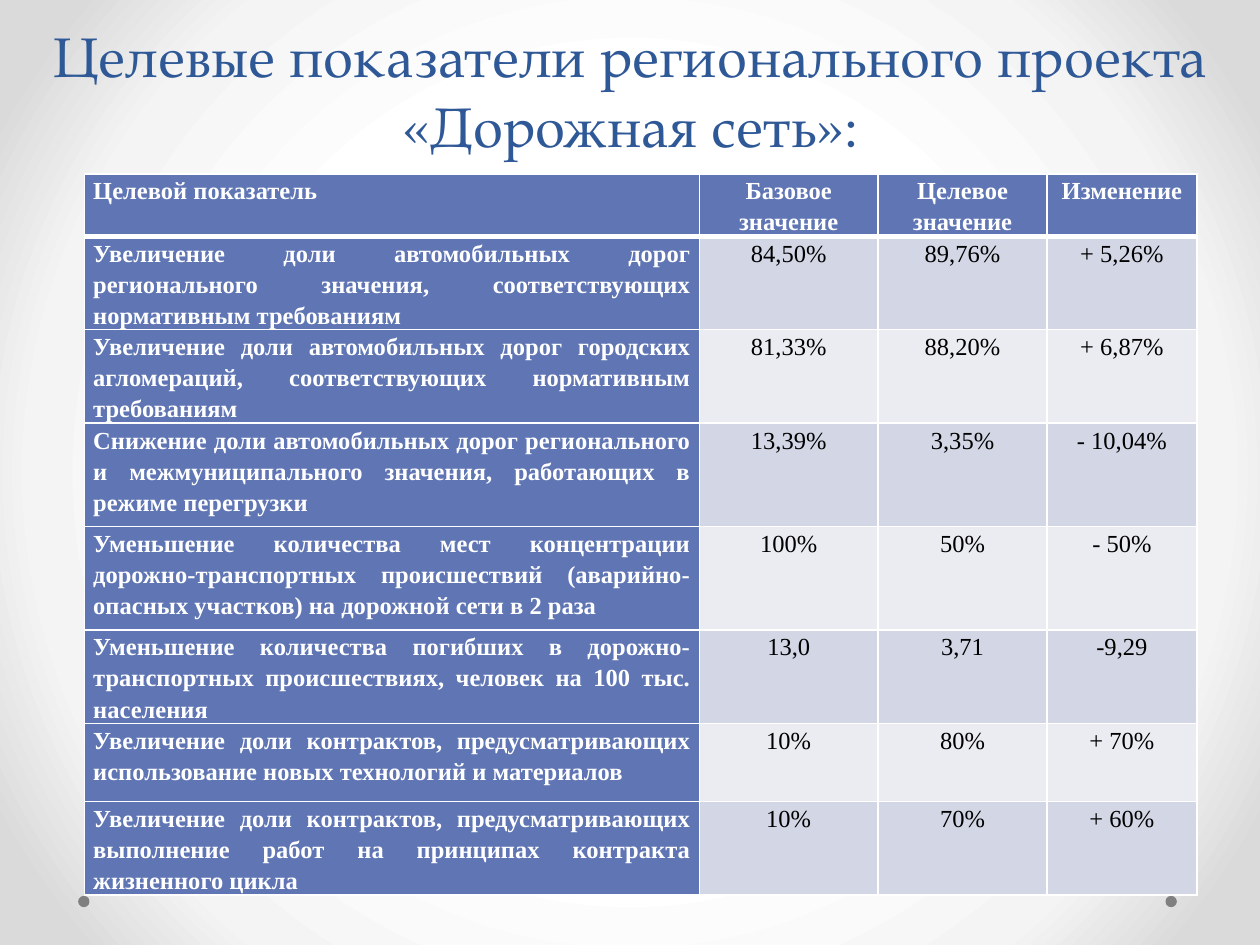
from dataclasses import dataclass

from lxml.etree import SubElement
from pptx import Presentation
from pptx.dml.color import RGBColor
from pptx.enum.shapes import MSO_SHAPE
from pptx.enum.text import MSO_ANCHOR, PP_ALIGN
from pptx.oxml import parse_xml
from pptx.oxml.ns import nsdecls, qn
from pptx.util import Inches, Pt


@dataclass(frozen=True)
class Theme:
    title_font: str = "TeX Gyre Pagella"
    table_font: str = "Times New Roman"
    title_size: int = 32
    title_leading: int = 40
    table_size: int = 14
    table_leading: float = 17.8
    title: str = "2F5897"
    accent: str = "6076B4"
    bands: tuple = ("D2D6E5", "EAECF2")
    white: str = "FFFFFF"
    black: str = "000000"
    dot: str = "808080"
    glow: tuple = ((50, "FFFFFF"), (76, "F4F4F4"), (92, "DADADA"))


THEME = Theme()
TITLE = "Целевые показатели регионального проекта «Дорожная сеть»:"
COLUMN_WIDTHS = (4.88, 1.42, 1.34, 1.19)
ROW_HEIGHTS = (0.21, 0.62, 0.62, 0.82, 0.82, 0.62, 0.62, 0.62)
INDICATORS = (
    ("Целевой показатель", "Базовое значение", "Целевое значение", "Изменение"),
    ("Увеличение доли автомобильных дорог регионального значения, "
     "соответствующих нормативным требованиям", "84,50%", "89,76%", "+ 5,26%"),
    ("Увеличение доли автомобильных дорог городских агломераций, "
     "соответствующих нормативным требованиям", "81,33%", "88,20%", "+ 6,87%"),
    ("Снижение доли автомобильных дорог регионального и межмуниципального "
     "значения, работающих в режиме перегрузки", "13,39%", "3,35%", "- 10,04%"),
    ("Уменьшение количества мест концентрации дорожно-транспортных происшествий "
     "(аварийно-опасных участков) на дорожной сети в 2 раза", "100%", "50%", "- 50%"),
    ("Уменьшение количества погибших в дорожно-транспортных происшествиях, "
     "человек на 100 тыс. населения", "13,0", "3,71", "-9,29"),
    ("Увеличение доли контрактов, предусматривающих использование новых "
     "технологий и материалов", "10%", "80%", "+ 70%"),
    ("Увеличение доли контрактов, предусматривающих выполнение работ на "
     "принципах контракта жизненного цикла", "10%", "70%", "+ 60%"),
)


def set_background(slide):
    """Fill the slide with a gradient that spreads from its centre."""
    stops = "".join(
        f'<a:gs pos="{position * 1000}"><a:srgbClr val="{color}"/></a:gs>'
        for position, color in THEME.glow
    )
    background = parse_xml(
        f'<p:bg {nsdecls("p", "a")}><p:bgPr><a:gradFill rotWithShape="1">'
        f'<a:gsLst>{stops}</a:gsLst><a:path path="circle">'
        '<a:fillToRect l="50000" t="50000" r="50000" b="50000"/></a:path>'
        "</a:gradFill><a:effectLst/></p:bgPr></p:bg>"
    )
    slide.element.cSld.insert(0, background)


def add_text(paragraph, text, font, size, color, bold=False):
    run = paragraph.add_run()
    run.text = text
    run.font.name = font
    run.font.size = Pt(size)
    run.font.bold = bold
    run.font.color.rgb = RGBColor.from_string(color)


def add_dot(slide, left, top, diameter):
    dot = slide.shapes.add_shape(
        MSO_SHAPE.OVAL, Inches(left), Inches(top), Inches(diameter), Inches(diameter)
    )
    dot.shadow.inherit = False
    dot.fill.solid()
    dot.fill.fore_color.rgb = RGBColor.from_string(THEME.dot)
    dot.line.fill.background()


def add_title(slide):
    box = slide.shapes.add_textbox(Inches(0.32), Inches(0.21), Inches(9.37), Inches(1.1))
    frame = box.text_frame
    frame.word_wrap = True
    frame.vertical_anchor = MSO_ANCHOR.BOTTOM
    paragraph = frame.paragraphs[0]
    paragraph.alignment = PP_ALIGN.CENTER
    paragraph.line_spacing = Pt(THEME.title_leading)
    add_text(paragraph, TITLE, THEME.title_font, THEME.title_size, THEME.title)


def set_borders(cell, top, bottom):
    properties = cell._tc.get_or_add_tcPr()
    for side, width in (("L", 1), ("R", 1), ("T", top), ("B", bottom)):
        line = SubElement(properties, qn(f"a:ln{side}"), w=str(Pt(width)))
        fill = SubElement(line, qn("a:solidFill"))
        SubElement(fill, qn("a:srgbClr"), val=THEME.white)


def fill_cell(cell, text, row, column):
    """Style a cell by its place: header row, label column or banded value."""
    is_heading = row == 0 or column == 0
    set_borders(cell, top=3 if row == 1 else 1, bottom=3 if row == 0 else 1)
    cell.fill.solid()
    cell.fill.fore_color.rgb = RGBColor.from_string(
        THEME.accent if is_heading else THEME.bands[(row - 1) % 2]
    )
    cell.margin_left = cell.margin_right = Inches(0.07)
    cell.margin_top = cell.margin_bottom = 0
    paragraph = cell.text_frame.paragraphs[0]
    paragraph.alignment = PP_ALIGN.CENTER if column else PP_ALIGN.JUSTIFY
    paragraph.line_spacing = Pt(THEME.table_leading)
    add_text(paragraph, text, THEME.table_font, THEME.table_size,
             THEME.white if is_heading else THEME.black, is_heading)


def add_indicator_table(slide):
    frame = slide.shapes.add_table(
        len(INDICATORS), len(COLUMN_WIDTHS), Inches(0.67), Inches(1.38),
        Inches(sum(COLUMN_WIDTHS)), Inches(sum(ROW_HEIGHTS)),
    )
    table = frame.table
    table.horz_banding = False
    for column, width in zip(table.columns, COLUMN_WIDTHS):
        column.width = Inches(width)
    for row, height in zip(table.rows, ROW_HEIGHTS):
        row.height = Inches(height)
    for row, texts in enumerate(INDICATORS):
        for column, text in enumerate(texts):
            fill_cell(table.cell(row, column), text, row, column)
    frame.height = Inches(5.92)


def main():
    presentation = Presentation()
    presentation.slide_width = Inches(10)
    presentation.slide_height = Inches(7.5)
    slide = presentation.slides.add_slide(presentation.slide_layouts[6])
    set_background(slide)
    for left in (9.25, 0.62):
        add_dot(slide, left, top=7.11, diameter=0.09)
    add_title(slide)
    add_indicator_table(slide)
    presentation.save("out.pptx")


if __name__ == "__main__":
    main()
